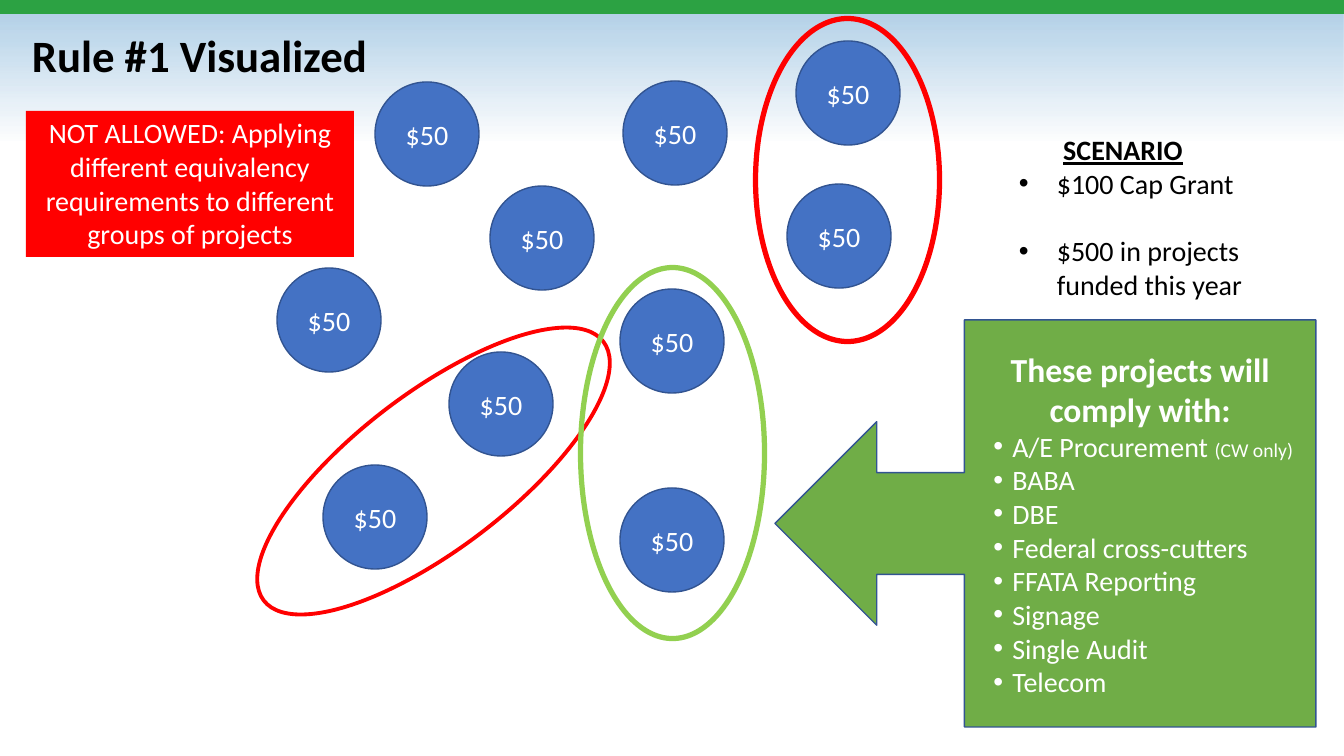
from lxml.etree import SubElement
from pptx import Presentation
from pptx.dml.color import RGBColor
from pptx.enum.shapes import MSO_SHAPE
from pptx.enum.text import MSO_ANCHOR, PP_ALIGN
from pptx.oxml.ns import qn
from pptx.util import Pt

PX = 914400 / 100.8
COLORS = {
    "band": "2CA243", "sky": "0668B2", "project": "4472C4", "outline": "325491",
    "excluded": "FF0000", "equivalency": "92D050", "callout": "70AD47",
    "white": "FFFFFF", "black": "000000",
}

deck = Presentation()
deck.slide_width, deck.slide_height = round(1344 * PX), round(756 * PX)
slide = deck.slides.add_slide(deck.slide_layouts[6])


def add_block(preset, box, fill=None, line=None, line_width=1):
    """Add a preset shape, or a text box when preset is None; box is in px."""
    place = [round(length * PX) for length in box]
    if preset is None:
        block = slide.shapes.add_textbox(*place)
    else:
        block = slide.shapes.add_shape(preset, *place)
        block.shadow.inherit = False
        if fill:
            block.fill.solid()
            block.fill.fore_color.rgb = RGBColor.from_string(COLORS[fill])
        else:
            block.fill.background()
        if line:
            block.line.color.rgb = RGBColor.from_string(COLORS[line])
            block.line.width = Pt(line_width)
        else:
            block.line.fill.background()
    block.text_frame.word_wrap = True
    return block


def write(block, text, size, color, align=PP_ALIGN.LEFT, bold=False, bullet=None):
    """Fill the next paragraph; bullet is (left margin, hanging indent) in px."""
    frame = block.text_frame
    paragraph = frame.add_paragraph() if frame.text else frame.paragraphs[0]
    paragraph.text = text
    paragraph.alignment = align
    if bullet:
        properties = paragraph._p.get_or_add_pPr()
        margin, hanging = bullet
        properties.set("marL", str(round(margin * PX)))
        properties.set("indent", str(round(-hanging * PX)))
        SubElement(properties, qn("a:buFont"), typeface="Arial")
        SubElement(properties, qn("a:buChar"), char="•")
    paragraph.font.name = "Calibri"
    paragraph.font.size = Pt(size)
    paragraph.font.bold = bold
    paragraph.font.color.rgb = RGBColor.from_string(COLORS[color])
    return paragraph


# Header: a sky that fades downwards under a green band
sky = add_block(MSO_SHAPE.RECTANGLE, (0, 14, 1344, 187))
sky.fill.gradient()
sky.fill.gradient_angle = 90
for stop, position, alpha in zip(sky.fill.gradient_stops, (0.32, 1), (0, 30)):
    stop.position = position
    stop.color.rgb = RGBColor.from_string(COLORS["sky"])
    stop_color = stop._gs.find(qn("a:srgbClr"))
    SubElement(stop_color, qn("a:alpha"), val=str(alpha * 1000))
add_block(MSO_SHAPE.RECTANGLE, (0, 0, 1344, 14), "band")

# Projects
for left, top in [
    (277, 268), (375, 82), (449, 352), (490, 186), (323, 465),
    (787, 184), (620, 488), (620, 289), (623, 81), (796, 41),
]:
    project = add_block(MSO_SHAPE.FLOWCHART_CONNECTOR, (left, top, 104, 104),
                        "project", "outline")
    project.text_frame.vertical_anchor = MSO_ANCHOR.MIDDLE
    write(project, "$50", 20, "white", PP_ALIGN.CENTER)

# Rings around groups of projects
for box, rotation, color, width in [
    ((220, 393, 427, 156), 142.7, "excluded", 2.75),
    ((686, 88, 323, 184), 90, "excluded", 3.75),
    ((487, 361, 371, 184), 90, "equivalency", 3.75),
]:
    ring = add_block(MSO_SHAPE.OVAL, box, None, color, width)
    ring.rotation = rotation

scenario = add_block(None, (959, 128, 328, 179))
heading = write(scenario, "SCENARIO", 20, "black", PP_ALIGN.CENTER, bold=True)
heading.font.underline = True
for fact in ("$100 Cap Grant\v", "$500 in projects funded this year"):
    write(scenario, fact, 20, "black", bullet=(88, 38)).level = 1

requirements = add_block(MSO_SHAPE.LEFT_ARROW_CALLOUT, (775, 320, 541, 407),
                         "callout", "outline")
requirements.text_frame.vertical_anchor = MSO_ANCHOR.MIDDLE
write(requirements, "These projects will comply with:", 24, "white",
      PP_ALIGN.CENTER, bold=True)
for requirement, note in [
    ("A/E Procurement ", "(CW only)"), ("BABA", ""), ("DBE", ""),
    ("Federal cross-cutters", ""), ("FFATA Reporting", ""), ("Signage", ""),
    ("Single Audit", ""), ("Telecom", ""),
]:
    item = write(requirements, requirement, 20, "white", bullet=(38, 19))
    if note:
        remark = item.add_run()
        remark.text = note
        remark.font.size = Pt(14)

warning = add_block(MSO_SHAPE.RECTANGLE, (26, 111, 328, 146), "excluded")
warning.text_frame.vertical_anchor = MSO_ANCHOR.TOP
write(warning, "NOT ALLOWED: Applying different equivalency requirements "
      "to different groups of projects", 20, "white", PP_ALIGN.CENTER)

title = add_block(None, (22, 23, 402, 65))
write(title, "Rule #1 Visualized", 32, "black", bold=True)

deck.save("out.pptx")
